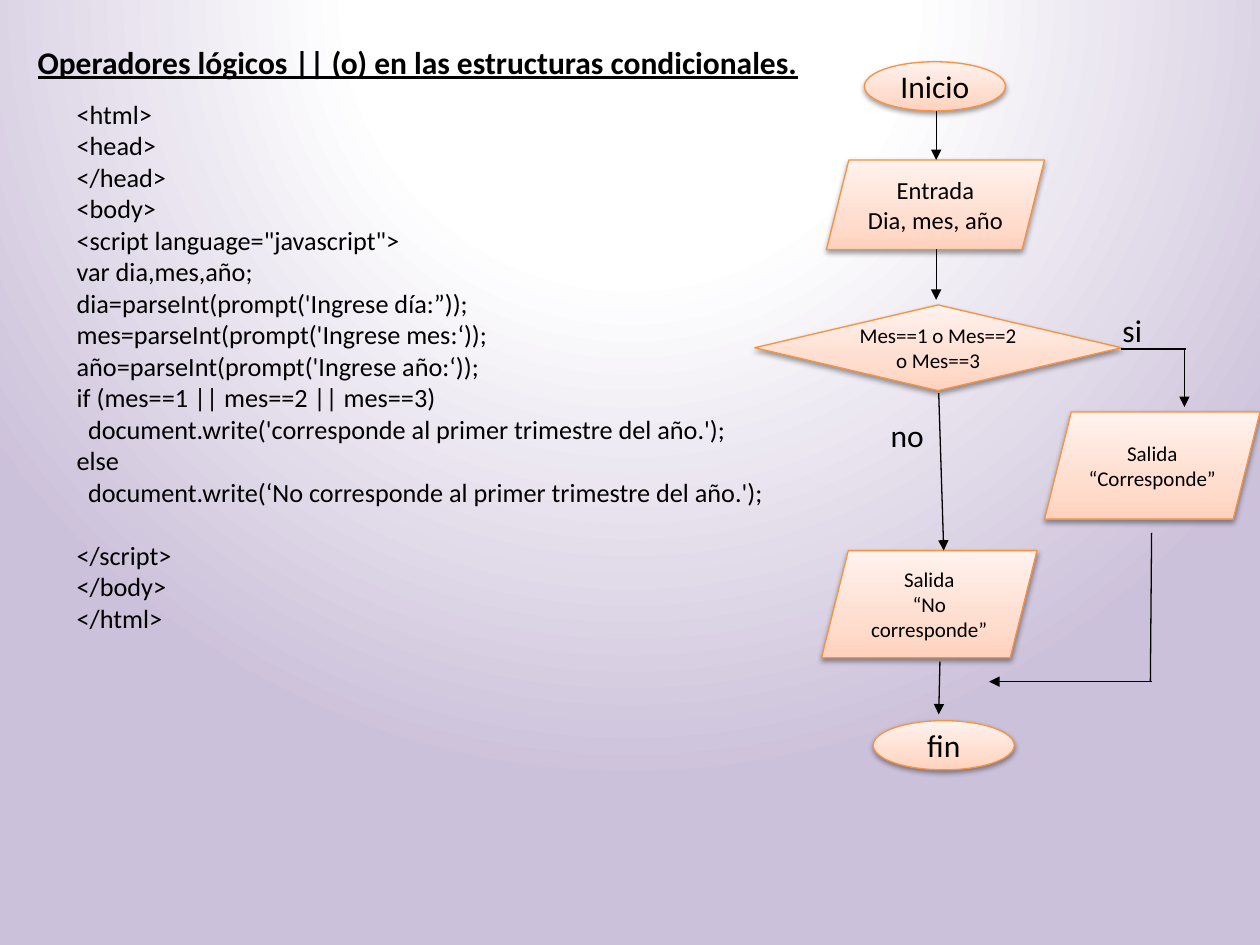
"""Build a slide on the logical OR operator: JavaScript code beside its flowchart."""
import pptx
import pptx.dml.color
import pptx.enum.shapes
import pptx.enum.text
import pptx.oxml
import pptx.oxml.ns
import pptx.util
from pptx.util import Inches, Pt

COLORS = {"text": "000000", "outline": "F69240", "white": "FFFFFF", "lilac": "CCC1DA",
          "peach": "FFD2BD", "peach_mid": "FFDED0", "peach_light": "FFF2ED"}
FONT = "Calibri"
NAMESPACE = pptx.oxml.ns.nsdecls("a")
SHAPE = pptx.enum.shapes.MSO_SHAPE

TITLE = "Operadores lógicos || (o) en las estructuras condicionales."
CODE = [
    "<html>",
    "<head>",
    "</head>",
    "<body>",
    "<script language=\"javascript\">",
    "var dia,mes,año;",
    "dia=parseInt(prompt('Ingrese día:”));",
    "mes=parseInt(prompt('Ingrese mes:‘));",
    "año=parseInt(prompt('Ingrese año:‘));",
    "if (mes==1 || mes==2 || mes==3)",
    "document.write('corresponde al primer trimestre del año.');",
    "else",
    "document.write(‘No corresponde al primer trimestre del año.');",
    "</script>",
    "</body>",
    "</html>",
]
STEPS = [
    (SHAPE.OVAL, (6.86, 0.49, 1.12, 0.39), ["Inicio"], 18),
    (SHAPE.PARALLELOGRAM, (6.56, 1.27, 1.73, 0.71), ["Entrada", "Dia, mes, año"], 14),
    (SHAPE.DIAMOND, (5.99, 2.42, 2.91, 0.68), ["Mes==1 o Mes==2 o Mes==3"], 12),
    (SHAPE.PARALLELOGRAM, (8.29, 3.27, 1.71, 0.85), ["Salida", "“Corresponde”"], 12),
    (SHAPE.PARALLELOGRAM, (6.52, 4.37, 1.71, 0.85), ["Salida", "“No corresponde”"], 12),
    (SHAPE.OVAL, (6.93, 5.72, 1.12, 0.39), ["fin"], 18),
]
BRANCH_LABELS = [("si", (8.81, 2.42, 0.39, 0.4)), ("no", (6.97, 3.25, 0.51, 0.4))]
ARROWS = [
    (7.43, 0.88, 7.43, 1.27),
    (7.43, 1.98, 7.43, 2.38),
    (7.45, 3.12, 7.49, 4.37),
    (7.46, 5.25, 7.45, 5.67),
    (9.4, 2.77, 9.4, 3.23),
    (9.14, 5.41, 7.85, 5.41),
]
PLAIN_LINES = [(8.9, 2.77, 9.41, 2.77), (9.14, 4.23, 9.13, 5.41)]

PEACH_STOPS = [(0, "peach"), (35, "peach_mid"), (100, "peach_light")]
PAGE_STOPS = [(0, "white"), (35, "white"), (100, "lilac")]
UPWARD = '<a:lin ang="16200000" scaled="1"/>'
CIRCLE = ('<a:path path="circle"><a:fillToRect l="50000" t="-80000" r="50000" b="180000"/>'
          '</a:path>')
SHADOW = (f'<a:outerShdw {NAMESPACE} blurRad="40000" dist="20000" dir="5400000" rotWithShape="0">'
          f'<a:srgbClr val="{COLORS["text"]}"><a:alpha val="38000"/></a:srgbClr></a:outerShdw>')


def rgb(name):
    return pptx.dml.color.RGBColor.from_string(COLORS[name])


def set_gradient(fill, holder, stops, direction):
    fill.gradient()
    stop_xml = "".join(f'<a:gs pos="{position * 1000}"><a:srgbClr val="{COLORS[name]}"/></a:gs>'
                       for position, name in stops)
    gradient = pptx.oxml.parse_xml(f'<a:gradFill {NAMESPACE} rotWithShape="1">'
                                   f'<a:gsLst>{stop_xml}</a:gsLst>{direction}</a:gradFill>')
    current = holder.find(pptx.oxml.ns.qn("a:gradFill"))
    holder.replace(current, gradient)


def write(frame, lines, size, align=None):
    frame.word_wrap = True
    frame.text = "\n".join(lines)
    for para in frame.paragraphs:
        para.alignment = align
        para.font.name = FONT
        para.font.size = Pt(size)
        para.font.color.rgb = rgb("text")


def add_text(page, area, lines, size):
    box = page.shapes.add_textbox(*map(Inches, area))
    write(box.text_frame, lines, size)
    return box.text_frame.paragraphs


def add_step(page, kind, area, lines, size):
    step = page.shapes.add_shape(kind, *map(Inches, area))
    properties = step.element.spPr
    set_gradient(step.fill, properties, PEACH_STOPS, UPWARD)
    step.line.color.rgb = rgb("outline")
    step.line.width = Pt(0.75)
    step.shadow.inherit = False
    properties.find(pptx.oxml.ns.qn("a:effectLst")).append(pptx.oxml.parse_xml(SHADOW))
    write(step.text_frame, lines, size, pptx.enum.text.PP_ALIGN.CENTER)
    step.text_frame.vertical_anchor = pptx.enum.text.MSO_ANCHOR.MIDDLE


def add_line(page, ends, arrow):
    line = page.shapes.add_connector(pptx.enum.shapes.MSO_CONNECTOR.STRAIGHT, *map(Inches, ends))
    line.line.color.rgb = rgb("text")
    line.line.width = Pt(0.75)
    properties = line.element.spPr
    if arrow:
        properties.find(pptx.oxml.ns.qn("a:ln")).append(
            pptx.oxml.parse_xml(f'<a:tailEnd {NAMESPACE} type="triangle"/>'))
    properties.append(pptx.oxml.parse_xml(f"<a:effectLst {NAMESPACE}/>"))


def main():
    deck = pptx.Presentation()
    deck.slide_width, deck.slide_height = Inches(10), Inches(7.5)
    page = deck.slides.add_slide(deck.slide_layouts[6])
    page_fill = page.background.fill
    set_gradient(page_fill, page.element.xpath(".//p:bgPr")[0], PAGE_STOPS, CIRCLE)

    title = add_text(page, (0.2, 0.29, 6.46, 0.4), [TITLE], 18)[0]
    title.font.bold = title.font.underline = True
    for para in add_text(page, (0.51, 0.73, 7.15, 5.3), CODE, 15):
        if para.text.startswith("document"):
            para._p.get_or_add_pPr().set("marL", str(Inches(0.09)))
        elif para.text == "</script>":
            para.space_before = Pt(18)

    for step in STEPS:
        add_step(page, *step)
    for ends in ARROWS:
        add_line(page, ends, True)
    for ends in PLAIN_LINES:
        add_line(page, ends, False)
    for label, area in BRANCH_LABELS:
        add_text(page, area, [label], 18)
    deck.save("out.pptx")


if __name__ == "__main__":
    main()
